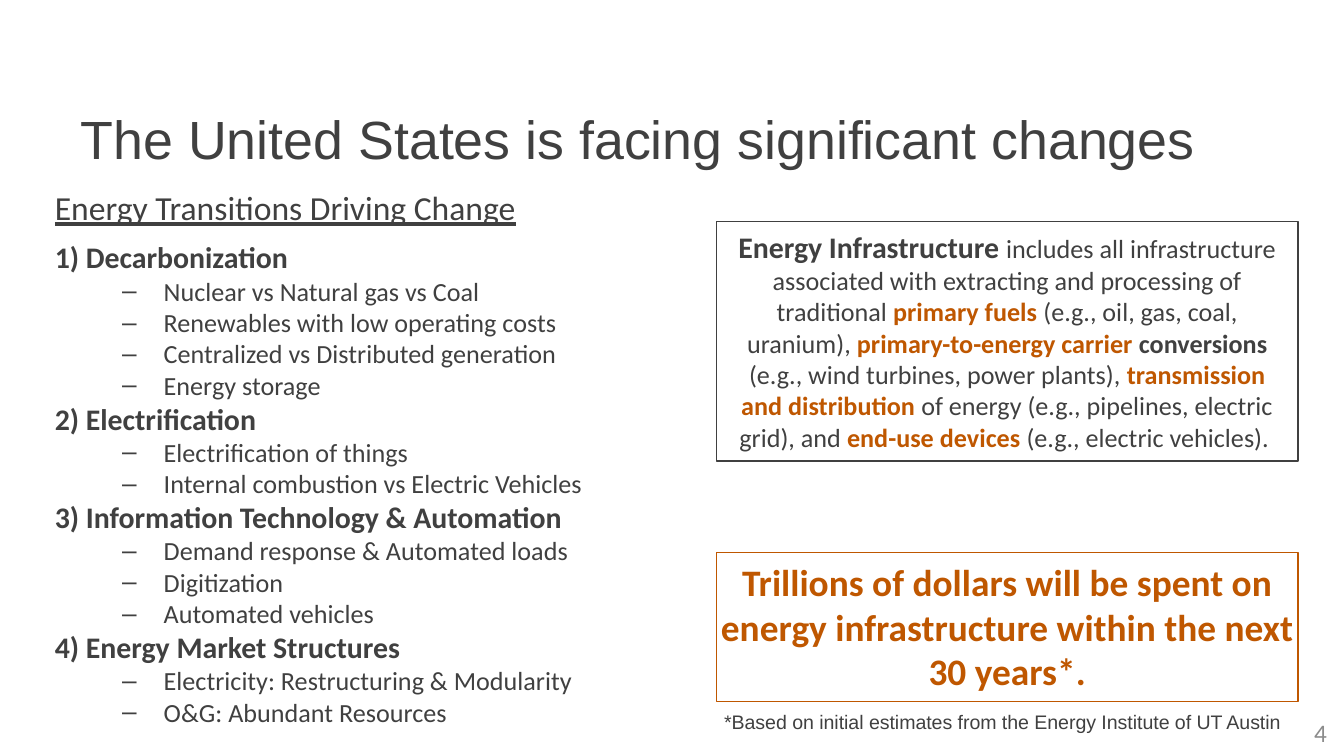
from dataclasses import dataclass

from lxml import etree
from pptx import Presentation
from pptx.dml.color import RGBColor
from pptx.enum.shapes import MSO_SHAPE
from pptx.enum.text import MSO_ANCHOR, PP_ALIGN
from pptx.oxml.ns import qn
from pptx.util import Inches, Pt

RECT = MSO_SHAPE.RECTANGLE
TOP, MIDDLE = MSO_ANCHOR.TOP, MSO_ANCHOR.MIDDLE
LEFT, CENTER, RIGHT = PP_ALIGN.LEFT, PP_ALIGN.CENTER, PP_ALIGN.RIGHT


@dataclass(frozen=True)
class Theme:
    ink: RGBColor = RGBColor(0x40, 0x40, 0x40)
    accent: RGBColor = RGBColor(0xBF, 0x57, 0x00)
    gray: RGBColor = RGBColor(0x8C, 0x8C, 0x8C)
    head: str = "Arial"
    body: str = "Calibri"
    title: float = 28.8
    claim: float = 20
    label: float = 18
    topic: float = 16
    text: float = 14
    page: float = 13.5
    note: float = 10.5


THEME = Theme()

TOPICS = [
    ("1) Decarbonization", [
        "Nuclear vs Natural gas vs Coal",
        "Renewables with low operating costs",
        "Centralized vs Distributed generation",
        "Energy storage",
    ]),
    ("2) Electrification", [
        "Electrification of things",
        "Internal combustion vs Electric Vehicles",
    ]),
    ("3) Information Technology & Automation", [
        "Demand response & Automated loads",
        "Digitization",
        "Automated vehicles",
    ]),
    ("4) Energy Market Structures", [
        "Electricity: Restructuring & Modularity",
        "O&G: Abundant Resources",
    ]),
]

PLAIN = (THEME.text, THEME.ink, False)
STRONG = (THEME.text, THEME.ink, True)
KEY = (THEME.text, THEME.accent, True)
SCOPE = [
    ("Energy Infrastructure ", (THEME.topic, THEME.ink, True)),
    ("includes all infrastructure associated with extracting and "
     "processing of traditional ", PLAIN),
    ("primary fuels ", KEY),
    ("(e.g., oil, gas, coal, uranium), ", PLAIN),
    ("primary-to-energy carrier ", KEY),
    ("conversions", STRONG),
    (" (e.g., wind turbines, power plants), ", PLAIN),
    ("transmission and distribution ", KEY),
    ("of energy (e.g., pipelines, electric grid), and ", PLAIN),
    ("end-use devices ", KEY),
    ("(e.g., electric vehicles). ", PLAIN),
]


def style(run, size, color=THEME.ink, bold=False, face=THEME.body):
    font = run.font
    font.name, font.size, font.bold = face, Pt(size), bold
    font.color.rgb = color


def add_text(slide, box, text, size, color=THEME.ink, face=THEME.body,
             align=LEFT, wrap=False):
    shape = slide.shapes.add_textbox(*map(Inches, box))
    frame = shape.text_frame
    frame.word_wrap = wrap
    frame.text = text
    para = frame.paragraphs[0]
    para.alignment = align
    style(para.runs[0], size, color, face=face)
    return shape


def add_title(slide, box, text):
    title = slide.shapes.title
    title.left, title.top, title.width, title.height = map(Inches, box)
    frame = title.text_frame
    frame.text = text
    frame.vertical_anchor = MIDDLE
    para = frame.paragraphs[0]
    para.alignment = LEFT
    style(para.runs[0], THEME.title, face=THEME.head)


def add_dash(para):
    props = para._p.get_or_add_pPr()
    props.set("marL", str(Inches(0.81)))
    props.set("indent", str(Inches(-0.31)))
    etree.SubElement(props, qn("a:buFont")).set("typeface", THEME.head)
    etree.SubElement(props, qn("a:buChar")).set("char", "–")


def add_topics(slide, box):
    left, top, width, height = box
    label = add_text(slide, (left, top, 3.67, 0.4),
                     "Energy Transitions Driving Change", THEME.label)
    label.text_frame.paragraphs[0].runs[0].font.underline = True

    area = (left, top + 0.39, width, height - 0.39)
    frame = slide.shapes.add_textbox(*map(Inches, area)).text_frame
    frame.word_wrap = True
    frame.vertical_anchor = TOP
    rows = [row for topic, items in TOPICS
            for row in [(topic, True)] + [(item, False) for item in items]]
    for i, (text, main) in enumerate(rows):
        para = frame.add_paragraph() if i else frame.paragraphs[0]
        para.text = text
        if not main:
            para.level = 1
            add_dash(para)
        style(para.runs[0], THEME.topic if main else THEME.text, bold=main)


def add_panel(slide, box, parts, color, inset):
    panel = slide.shapes.add_shape(RECT, *map(Inches, box))
    panel.shadow.inherit = False
    panel.fill.background()
    panel.line.color.rgb = color
    panel.line.width = Pt(0.75)
    frame = panel.text_frame
    frame.word_wrap = True
    frame.vertical_anchor = TOP
    frame.margin_left = frame.margin_right = Inches(inset)
    para = frame.paragraphs[0]
    para.alignment = CENTER
    for text, look in parts:
        run = para.add_run()
        run.text = text
        style(run, *look)


def add_facts(slide, box):
    left, top, width, height = box
    add_panel(slide, (left, top, width, 1.78), SCOPE, THEME.ink, 0.1)
    claim = ("Trillions of dollars will be spent on energy infrastructure "
             "within the next 30 years*.")
    add_panel(slide, (left, top + 2.46, width, 1.11),
              [(claim, (THEME.claim, THEME.accent, True))], THEME.accent, 0)
    add_text(slide, (left - 0.04, top + height - 0.28, width + 0.1, 0.28),
             "*Based on initial estimates from the Energy Institute of UT Austin",
             THEME.note, face=THEME.head)


def add_page(slide, box, number):
    page = add_text(slide, box, number, THEME.page, THEME.gray,
                    align=RIGHT, wrap=True)
    page.text_frame.vertical_anchor = MIDDLE


def main():
    deck = Presentation()
    deck.slide_width = Inches(10)
    deck.slide_height = deck.slide_width * 9 // 16
    slide = deck.slides.add_slide(deck.slide_layouts[5])
    add_title(slide, (0.5, 0.56, 9, 0.94),
              "The United States is facing significant changes")
    add_topics(slide, (0.31, 1.34, 4.35, 3.73))
    add_facts(slide, (5.33, 1.65, 4.33, 3.86))
    add_page(slide, (7.64, 5.3, 2.33, 0.3), "4")
    deck.save("out.pptx")


if __name__ == "__main__":
    main()
